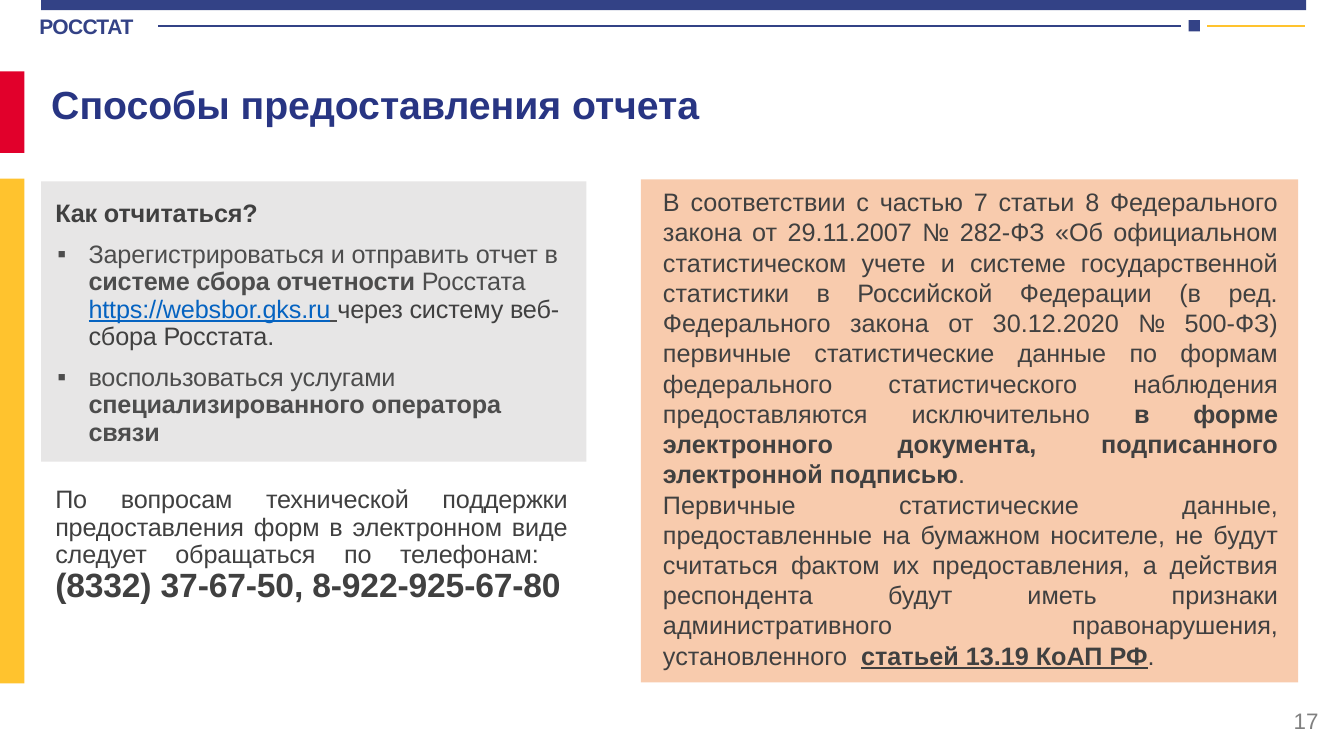
from dataclasses import dataclass

from lxml import etree
from pptx import Presentation
from pptx.dml.color import RGBColor
from pptx.enum.shapes import MSO_CONNECTOR, MSO_SHAPE
from pptx.enum.text import MSO_ANCHOR, PP_ALIGN
from pptx.oxml.ns import qn
from pptx.util import Emu, Inches, Pt

RECT = MSO_SHAPE.RECTANGLE
STRAIGHT = MSO_CONNECTOR.STRAIGHT
TOP, MIDDLE = MSO_ANCHOR.TOP, MSO_ANCHOR.MIDDLE
LEFT, RIGHT, JUSTIFY = PP_ALIGN.LEFT, PP_ALIGN.RIGHT, PP_ALIGN.JUSTIFY
WIDTH, HEIGHT = Inches(13.333), Inches(7.5)
COLUMNS, ROWS = 32, 18


@dataclass(frozen=True)
class Theme:
    """Colours, font and type sizes of the slide."""
    font: str = "Arial"
    blue: str = "334286"
    navy: str = "283583"
    red: str = "E1002B"
    yellow: str = "FFC32E"
    grey: str = "E7E6E6"
    peach: str = "F8CBAD"
    text: str = "404040"
    soft: str = "4D4D4D"
    link: str = "0563C1"
    muted: str = "808080"
    brand_size: float = 15
    number_size: float = 16
    body_size: float = 18
    phone_size: float = 24
    title_size: float = 28


T = Theme()


def col(n):
    """Return the length of n grid columns."""
    return Emu(round(WIDTH * n / COLUMNS))


def row(n):
    """Return the length of n grid rows."""
    return Emu(round(HEIGHT * n / ROWS))


def cells(x, y, w, h):
    """Return left, top, width and height of a grid area."""
    return col(x), row(y), col(w), row(h)


def block(s, area, color):
    """Add a plain filled rectangle."""
    sp = s.shapes.add_shape(RECT, *cells(*area))
    sp.shadow.inherit = False
    sp.fill.solid()
    sp.fill.fore_color.rgb = RGBColor.from_string(color)
    sp.line.fill.background()


def rule(s, start, end, y, color):
    """Add a horizontal line between two columns."""
    c = s.shapes.add_connector(STRAIGHT, col(start), row(y), col(end), row(y))
    c.line.color.rgb = RGBColor.from_string(color)
    c.line.width = Pt(2)
    etree.SubElement(c._element.spPr, qn("a:effectLst"))


def frame(s, area, anchor=TOP):
    """Add a wrapping text box and return its text frame."""
    tf = s.shapes.add_textbox(*cells(*area)).text_frame
    tf.word_wrap = True
    tf.vertical_anchor = anchor
    return tf


def write(p, text, size=T.body_size, color=T.text, bold=False,
          underline=False, spacing=0):
    """Append a formatted run to a paragraph."""
    r = p.add_run()
    r.text = text
    r.font.name = T.font
    r.font.size = Pt(size)
    r.font.bold = bold
    r.font.underline = underline
    r.font.color.rgb = RGBColor.from_string(color)
    if spacing:
        r._r.get_or_add_rPr().set("spc", str(round(spacing * 100)))


def paragraph(tf, align=LEFT, before=0, leading=1.0, bullet=None):
    """Start a paragraph, reusing the first one while it is empty."""
    p = tf.paragraphs[0]
    if p.runs:
        p = tf.add_paragraph()
    p.alignment = align
    p.space_before = Pt(before)
    p.line_spacing = leading
    if bullet:
        pPr = p._p.get_or_add_pPr()
        pPr.set("marL", str(Inches(0.33)))
        pPr.set("indent", str(Inches(-0.31)))
        etree.SubElement(pPr, qn("a:buFont"), typeface=T.font)
        etree.SubElement(pPr, qn("a:buChar"), char=bullet)
    return p


def header(s):
    """Draw the top band, side bars and agency line."""
    block(s, (0.98, 0, 30.12, 0.24), T.blue)
    block(s, (0, 1.7, 0.58, 1.94), T.red)
    block(s, (0, 4.25, 0.58, 12.02), T.yellow)
    rule(s, 3.77, 28.13, 0.62, T.blue)
    block(s, (28.3, 0.48, 0.27, 0.27), T.blue)
    rule(s, 28.75, 31.08, 0.62, T.yellow)
    tf = frame(s, (0.94, 0.31, 2.76, 0.77))
    tf.margin_left = tf.margin_top = tf.margin_right = tf.margin_bottom = 0
    write(paragraph(tf), "РОССТАТ", size=T.brand_size, color=T.blue,
          bold=True, spacing=-0.5)


def title(s, text):
    """Place and format the slide title."""
    sp = s.shapes.title
    sp.left, sp.top, sp.width, sp.height = cells(0.98, 1.78, 19.15, 1.82)
    tf = sp.text_frame
    tf.vertical_anchor = TOP
    write(paragraph(tf), text, size=T.title_size, color=T.navy, bold=True)


def reporting_ways(s):
    """Write the ways of reporting and the support phones."""
    block(s, (0.98, 4.32, 12.98, 6.67), T.grey)
    tf = frame(s, (1.08, 4.66, 12.67, 11.23))
    tight = {"spacing": -0.1}
    soft = {"color": T.soft, **tight}
    p = paragraph(tf, JUSTIFY, leading=0.9)
    write(p, "Как отчитаться?", bold=True, **tight)
    p = paragraph(tf, before=10, leading=0.9, bullet="▪")
    write(p, "Зарегистрироваться и отправить отчет в ", **soft)
    write(p, "системе сбора отчетности", bold=True, **soft)
    write(p, " Росстата ", **soft)
    write(p, "https://websbor.gks.ru", color=T.link, underline=True, **tight)
    write(p, " ", underline=True, **soft)
    write(p, "через систему веб-сбора Росстата.", **tight)
    p = paragraph(tf, before=10, leading=0.9, bullet="▪")
    write(p, "воспользоваться услугами ", **soft)
    write(p, "специализированного оператора связи", bold=True, **soft)
    p = paragraph(tf, JUSTIFY, before=29, leading=0.9)
    write(p, "По вопросам технической поддержки предоставления форм "
             "в электронном виде следует обращаться по телефонам: ", **tight)
    p.add_line_break()
    write(p, "(8332) 37-67-50, 8-922-925-67-80", size=T.phone_size,
          bold=True, **tight)


def legal_basis(s):
    """Write the legal grounds on the right panel."""
    block(s, (15.26, 4.27, 15.65, 11.98), T.peach)
    tf = frame(s, (15.55, 4.32, 15.12, 11.88))
    p = paragraph(tf, JUSTIFY)
    write(p, "В соответствии с частью 7 статьи 8 Федерального закона "
             "от 29.11.2007 № 282-ФЗ «Об официальном статистическом учете "
             "и системе государственной статистики в Российской Федерации "
             "(в ред. Федерального закона от 30.12.2020 № 500-ФЗ) первичные "
             "статистические данные по формам федерального статистического "
             "наблюдения предоставляются исключительно ")
    write(p, "в форме электронного документа, подписанного электронной "
             "подписью", bold=True)
    write(p, ". ")
    p = paragraph(tf, JUSTIFY)
    write(p, "Первичные статистические данные, предоставленные на бумажном "
             "носителе, не будут считаться фактом их предоставления, "
             "а действия респондента будут иметь признаки "
             "административного правонарушения, установленного  ")
    write(p, "статьей 13.19 КоАП РФ", bold=True, underline=True)
    write(p, ".")


def page_number(s, text):
    """Write the page number at the bottom right."""
    tf = frame(s, (24.43, 16.68, 7.2, 0.96), MIDDLE)
    write(paragraph(tf, RIGHT), text, size=T.number_size, color=T.muted)


def main():
    """Build the slide and save it."""
    prs = Presentation()
    prs.slide_width, prs.slide_height = WIDTH, HEIGHT
    s = prs.slides.add_slide(prs.slide_layouts[5])
    header(s)
    title(s, "Способы предоставления отчета")
    reporting_ways(s)
    legal_basis(s)
    page_number(s, "17")
    prs.save("out.pptx")


if __name__ == "__main__":
    main()
